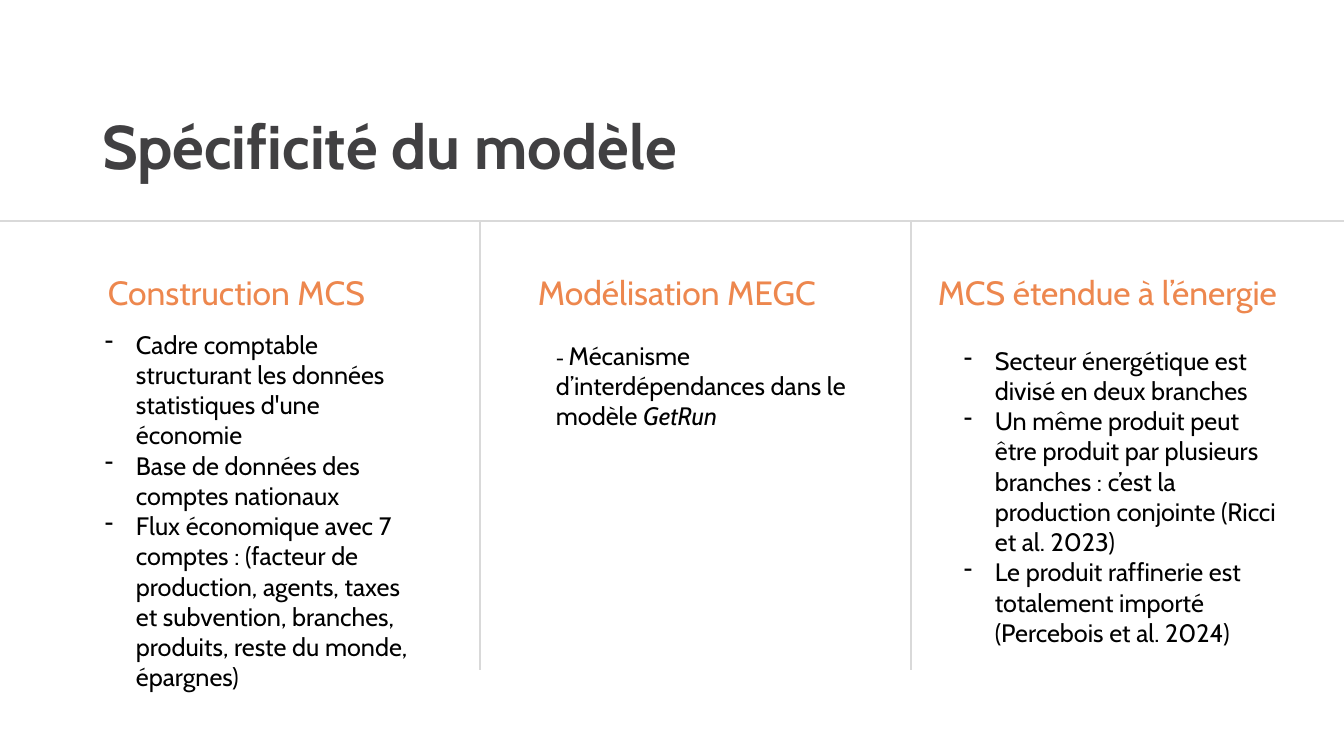
import pptx
import pptx.dml.color
import pptx.enum.shapes
import pptx.enum.text
import pptx.oxml
import pptx.oxml.ns
import pptx.util

PX = 914400 / 100.8
FONT = "Cabin"
GREY, ORANGE, BLACK, DARK = "D9D9D9", "ED874E", "000000", "414042"
RULE_Y = 221
HEADING_Y = 267
DASH_INDENT = 31


def px(length):
    return pptx.util.Emu(round(length * PX))


def color(hex_value):
    return pptx.dml.color.RGBColor.from_string(hex_value)


def place(shape, left, top, width, height):
    shape.left, shape.top = px(left), px(top)
    shape.width, shape.height = px(width), px(height)


def add_run(paragraph, text, size=18, fill=BLACK, bold=False, italic=False):
    run = paragraph.add_run()
    run.text = text
    run.font.name = FONT
    run.font.size = pptx.util.Pt(size)
    run.font.bold = bold
    run.font.italic = italic
    run.font.color.rgb = color(fill)


def set_dash(paragraph):
    properties = paragraph._p.get_or_add_pPr()
    properties.set("marL", str(px(DASH_INDENT)))
    properties.set("indent", str(-px(DASH_INDENT)))
    bullet = pptx.oxml.parse_xml(
        f'<a:buChar {pptx.oxml.ns.nsdecls("a")} char="-"/>')
    properties.append(bullet)


def add_text(slide, box, paragraphs, dashed=False, **style):
    """Each paragraph is a list of (text, run format) pairs."""
    text_box = slide.shapes.add_textbox(0, 0, 0, 0)
    place(text_box, *box)
    frame = text_box.text_frame
    frame.word_wrap = True
    for index, runs in enumerate(paragraphs):
        paragraph = frame.add_paragraph() if index else frame.paragraphs[0]
        if dashed:
            set_dash(paragraph)
        for text, run_style in runs:
            add_run(paragraph, text, **{**style, **run_style})


def add_rule(slide, x1, y1, x2, y2):
    rule = slide.shapes.add_connector(
        pptx.enum.shapes.MSO_CONNECTOR.STRAIGHT,
        px(x1), px(y1), px(x2), px(y2))
    rule.line.color.rgb = color(GREY)
    rule.line.width = pptx.util.Pt(1.5)
    rule._element.spPr.append(pptx.oxml.parse_xml(
        f'<a:effectLst {pptx.oxml.ns.nsdecls("a")}/>'))


def set_title(slide, text):
    title = slide.shapes.title
    place(title, 92, 103, 1124, 85)
    frame = title.text_frame
    frame.word_wrap = True
    frame.auto_size = pptx.enum.text.MSO_AUTO_SIZE.NONE
    frame.vertical_anchor = pptx.enum.text.MSO_ANCHOR.TOP
    paragraph = frame.paragraphs[0]
    paragraph.alignment = pptx.enum.text.PP_ALIGN.LEFT
    add_run(paragraph, text, size=44, fill=DARK, bold=True)


def plain(*texts):
    return [[(text, {})] for text in texts]


def main():
    deck = pptx.Presentation()
    deck.slide_width, deck.slide_height = px(1344), px(756)
    slide = deck.slides.add_slide(deck.slide_layouts[5])

    # Title and dividing lines
    set_title(slide, "Spécificité du modèle")
    add_rule(slide, 0, RULE_Y, 1344, RULE_Y)
    for divider_x in (480, 911):
        add_rule(slide, divider_x, 670, divider_x, RULE_Y)

    # Column headings
    headings = [
        ("Construction MCS", 98, 383),
        ("Modélisation MEGC", 528, 383),
        ("MCS étendue à l’énergie", 928, 482),
    ]
    for heading, left, width in headings:
        add_text(slide, (left, HEADING_Y, width, 50), plain(heading),
                 size=24, fill=ORANGE)

    # Column contents
    construction = plain(
        "Cadre comptable structurant les données statistiques d'une économie",
        "Base de données des comptes nationaux",
        "Flux économique avec 7 comptes : (facteur de production, agents, "
        "taxes et subvention, branches, produits, reste du monde, épargnes)",
    )
    modelling = [[
        ("- ", {"size": 14}),
        ("Mécanisme d’interdépendances dans le modèle ", {}),
        ("GetRun", {"italic": True}),
    ]]
    energy = plain(
        "Secteur énergétique est divisé en deux branches",
        "Un même produit peut être produit par plusieurs branches : "
        "c’est la production conjointe (Ricci et al. 2023)",
        "Le produit raffinerie est totalement importé "
        "(Percebois et al. 2024)",
    )
    add_text(slide, (95, 324, 341, 407), construction, dashed=True)
    add_text(slide, (546, 335, 341, 102), modelling)
    add_text(slide, (954, 340, 342, 370), energy, dashed=True)

    deck.save("out.pptx")


if __name__ == "__main__":
    main()
